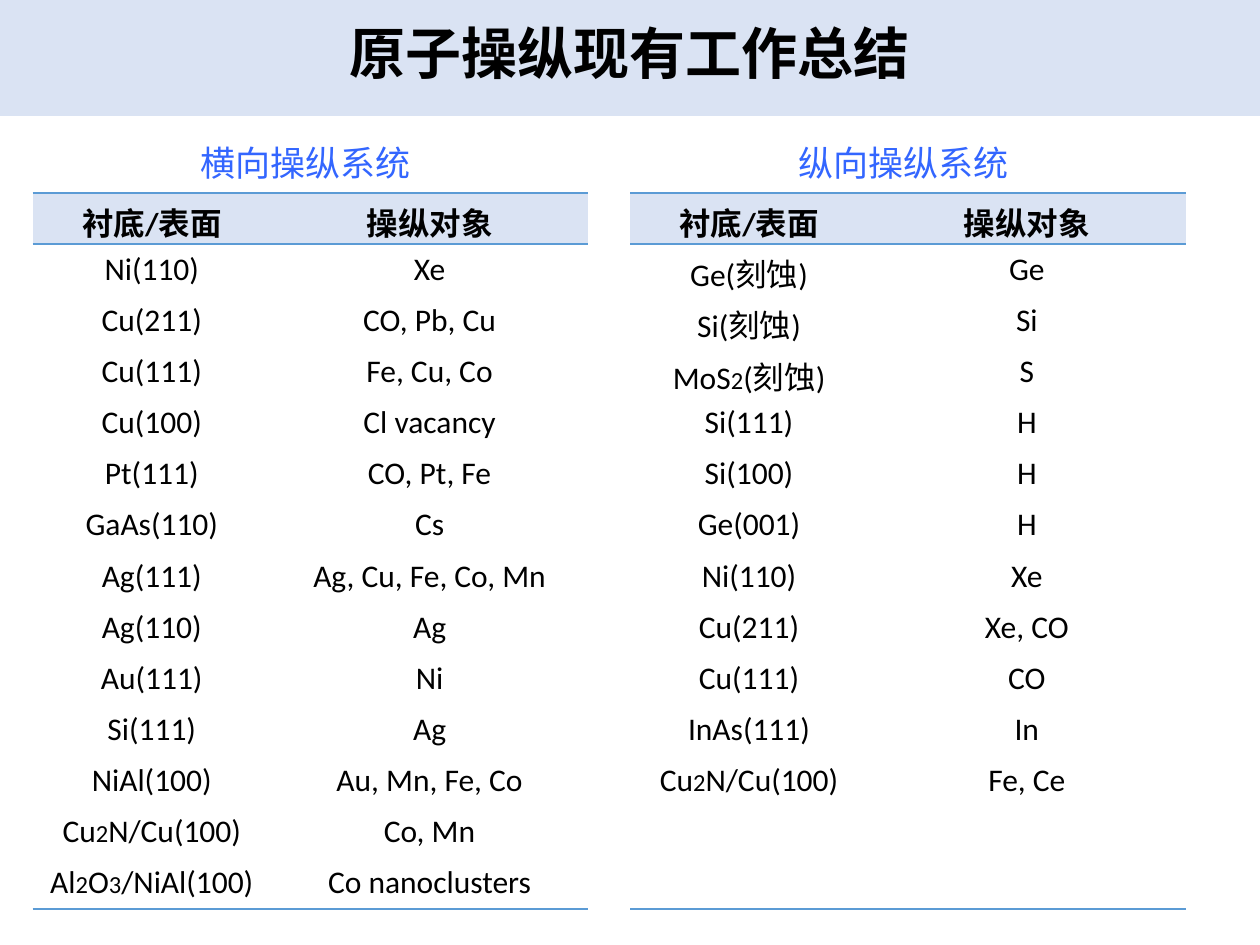
import pptx
import pptx.util
import pptx.dml.color
import pptx.enum.shapes
import pptx.enum.text
import pptx.oxml
import pptx.oxml.ns

Inches, Pt = pptx.util.Inches, pptx.util.Pt
RGB = pptx.dml.color.RGBColor.from_string
ALIGN = pptx.enum.text.PP_ALIGN
ANCHOR = pptx.enum.text.MSO_ANCHOR

TITLE = "原子操纵现有工作总结"
HEADER = ("衬底/表面", "操纵对象")
# An underscore marks the next character as a smaller index digit.
LATERAL = [
    ("Ni(110)", "Xe"),
    ("Cu(211)", "CO, Pb, Cu"),
    ("Cu(111)", "Fe, Cu, Co"),
    ("Cu(100)", "Cl vacancy"),
    ("Pt(111)", "CO, Pt, Fe"),
    ("GaAs(110)", "Cs"),
    ("Ag(111)", "Ag, Cu, Fe, Co, Mn"),
    ("Ag(110)", "Ag"),
    ("Au(111)", "Ni"),
    ("Si(111)", "Ag"),
    ("NiAl(100)", "Au, Mn, Fe, Co"),
    ("Cu_2N/Cu(100)", "Co, Mn"),
    ("Al_2O_3/NiAl(100)", "Co nanoclusters"),
]
VERTICAL = [
    ("Ge(刻蚀)", "Ge"),
    ("Si(刻蚀)", "Si"),
    ("MoS_2(刻蚀)", "S"),
    ("Si(111)", "H"),
    ("Si(100)", "H"),
    ("Ge(001)", "H"),
    ("Ni(110)", "Xe"),
    ("Cu(211)", "Xe, CO"),
    ("Cu(111)", "CO"),
    ("InAs(111)", "In"),
    ("Cu_2N/Cu(100)", "Fe, Ce"),
    ("", ""),
    ("", ""),
]
SYSTEMS = [
    {"caption": "横向操纵系统", "rows": LATERAL, "left": 0.26, "caption_left": 1.49},
    {"caption": "纵向操纵系统", "rows": VERTICAL, "left": 5, "caption_left": 6.24},
]
THEME = {
    "latin": "Calibri", "cjk": "Noto Sans CJK SC",
    "title": 32, "caption": 20, "body": 18, "index": 14,
    "text": "000000", "accent": "3366FF", "band": "DAE3F3", "rule": "5B9BD5",
}
COLUMNS = (1.89, 2.52)
ROW_HEIGHT = 0.406
NO_STYLE = "{2D5ABB26-0587-4C30-8999-92F81FD0307C}"


def write(tf, text, size="body", font="latin", color="text", bold=False,
          align=ALIGN.CENTER, spacing=None):
    p = tf.paragraphs[0]
    p.alignment = align
    if spacing:
        p.line_spacing = spacing
    first, *rest = text.split("_")
    parts = [(first, size)]
    for part in rest:
        parts += [(part[:1], "index"), (part[1:], size)]
    for part, part_size in parts:
        if not part:
            continue
        r = p.add_run()
        r.text = part
        r.font.size = Pt(THEME[part_size])
        r.font.name = THEME[font]
        r.font.bold = bold
        r.font.color.rgb = RGB(THEME[color])
        ea = pptx.oxml.parse_xml(
            f'<a:ea {pptx.oxml.ns.nsdecls("a")} typeface="{THEME["cjk"]}"/>')
        r.font._element.find(pptx.oxml.ns.qn("a:latin")).addnext(ea)


def add_rule(cell, side):
    cell._tc.get_or_add_tcPr().append(pptx.oxml.parse_xml(
        f'<a:{side} {pptx.oxml.ns.nsdecls("a")} w="{Pt(1)}"><a:solidFill>'
        f'<a:srgbClr val="{THEME["rule"]}"/></a:solidFill></a:{side}>'))


def add_system(s, caption, rows, left, caption_left):
    box = s.shapes.add_textbox(Inches(caption_left), Inches(0.97), Inches(1.93), Inches(0.48))
    box.text_frame.word_wrap = True
    write(box.text_frame, caption, size="caption", font="cjk", color="accent",
          align=ALIGN.LEFT, spacing=1.3)

    lines = [HEADER] + rows
    table = s.shapes.add_table(
        len(lines), len(COLUMNS), Inches(left), Inches(1.53),
        Inches(sum(COLUMNS)), Inches(ROW_HEIGHT * len(lines))).table
    table._tbl.tblPr.find(pptx.oxml.ns.qn("a:tableStyleId")).text = NO_STYLE
    table.horz_banding = False
    for column, width in zip(table.columns, COLUMNS):
        column.width = Inches(width)
    for i, line in enumerate(lines):
        table.rows[i].height = Inches(ROW_HEIGHT)
        for j, text in enumerate(line):
            cell = table.cell(i, j)
            write(cell.text_frame, text, bold=i == 0)
            if i == 0:
                add_rule(cell, "lnT")
            if i in (0, len(lines) - 1):
                add_rule(cell, "lnB")
            if i == 0:
                cell.fill.solid()
                cell.fill.fore_color.rgb = RGB(THEME["band"])
            else:
                cell.fill.background()


def main():
    prs = pptx.Presentation()
    prs.slide_width, prs.slide_height = Inches(10), Inches(7.5)
    s = prs.slides.add_slide(prs.slide_layouts[5])

    band = s.shapes.add_shape(pptx.enum.shapes.MSO_SHAPE.RECTANGLE, 0, 0, Inches(10), Inches(0.92))
    band.shadow.inherit = False
    band.fill.solid()
    band.fill.fore_color.rgb = RGB(THEME["band"])
    band.line.fill.background()
    s.shapes._spTree.insert(2, band._element)

    for system in SYSTEMS:
        add_system(s, **system)

    title = s.shapes.title
    title.left, title.top, title.width, title.height = 0, Inches(0.1), Inches(10), Inches(0.64)
    title.text_frame.auto_size = pptx.enum.text.MSO_AUTO_SIZE.NONE
    title.text_frame.vertical_anchor = ANCHOR.TOP
    write(title.text_frame, TITLE, size="title", bold=True)

    prs.save("out.pptx")


if __name__ == "__main__":
    main()
